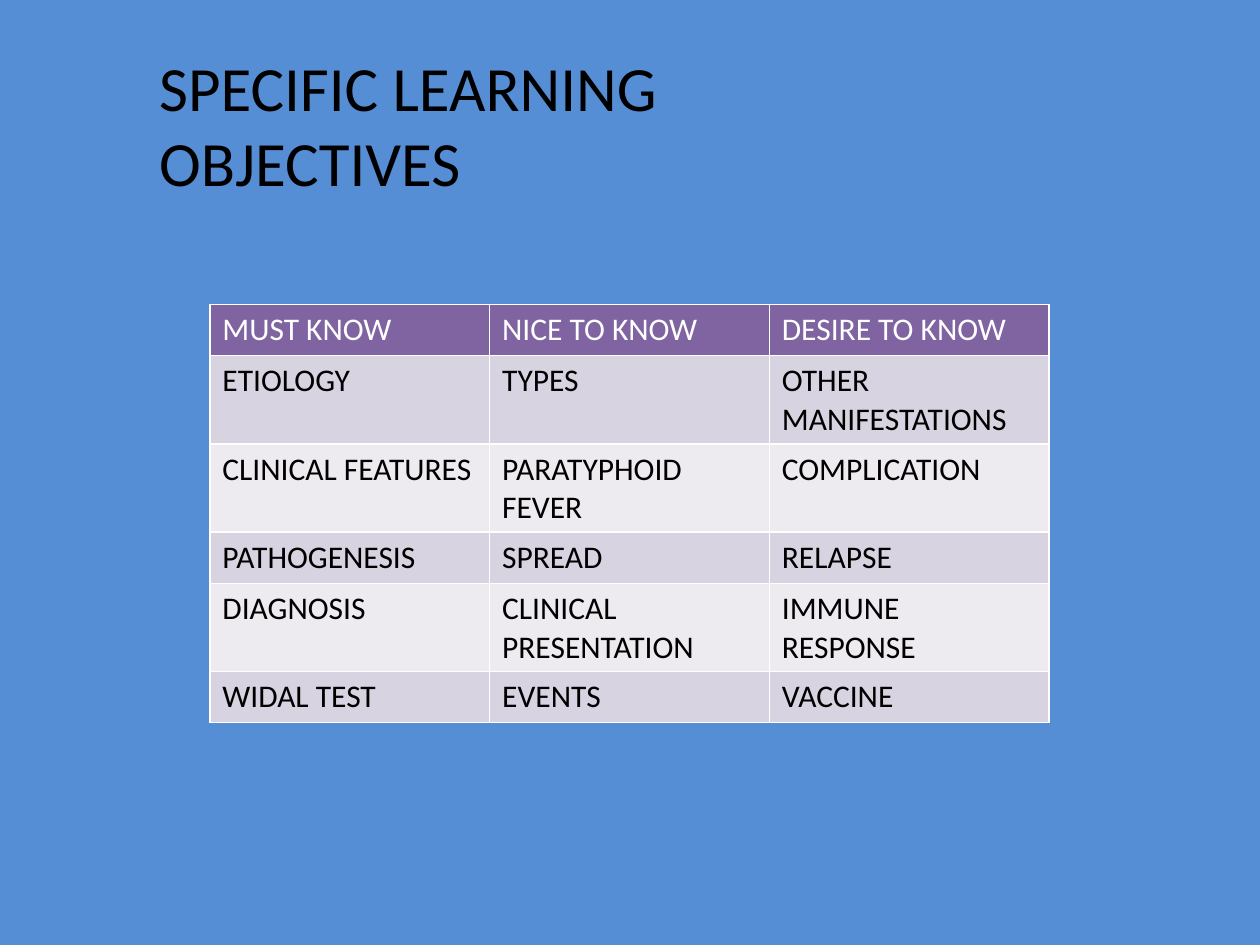
from pptx import Presentation
from pptx.dml.color import RGBColor
from pptx.enum.text import MSO_AUTO_SIZE as Fit
from pptx.util import Cm, Pt

TITLE = "SPECIFIC LEARNING OBJECTIVES"
ROWS = [
    ("MUST KNOW", "NICE TO KNOW", "DESIRE TO KNOW"),
    ("ETIOLOGY", "TYPES", "OTHER MANIFESTATIONS"),
    ("CLINICAL FEATURES", "PARATYPHOID FEVER", "COMPLICATION"),
    ("PATHOGENESIS", "SPREAD", "RELAPSE"),
    ("DIAGNOSIS", "CLINICAL PRESENTATION", "IMMUNE RESPONSE"),
    ("WIDAL TEST", "EVENTS", "VACCINE"),
]
BLUE, HEAD, BANDS = "558ED5", "8064A2", ("EDEAF0", "D8D3E0")
BLACK, WHITE = "000000", "FFFFFF"
WIDE, HIGH = 5.64, 1.03


def paint(fill, tint):
    fill.solid()
    fill.fore_color.rgb = RGBColor.from_string(tint)


def write(frame, text, size, tint):
    frame.text = text
    font = frame.paragraphs[0].runs[0].font
    for key, val in {"name": "Calibri", "size": Pt(size), "bold": False}.items():
        setattr(font, key, val)
    paint(font.fill, tint)


deck = Presentation()
deck.slide_width, deck.slide_height = Cm(25.4), Cm(19.05)
slide = deck.slides.add_slide(deck.slide_layouts[6])
paint(slide.background.fill, BLUE)

title = slide.shapes.add_textbox(Cm(2.96), Cm(0.85), Cm(12.28), Cm(3.33)).text_frame
title.word_wrap = True
title.auto_size = Fit.SHAPE_TO_FIT_TEXT
write(title, TITLE, 36, BLACK)

count, cols = len(ROWS), len(ROWS[0])
table = slide.shapes.add_table(
    count, cols, Cm(4.23), Cm(6.14), Cm(WIDE * cols), Cm(HIGH * count)
).table
for r, row in enumerate(ROWS):
    for c, text in enumerate(row):
        cell = table.cell(r, c)
        paint(cell.fill, BANDS[r % 2] if r else HEAD)
        write(cell.text_frame, text, 18, BLACK if r else WHITE)

deck.save("out.pptx")
